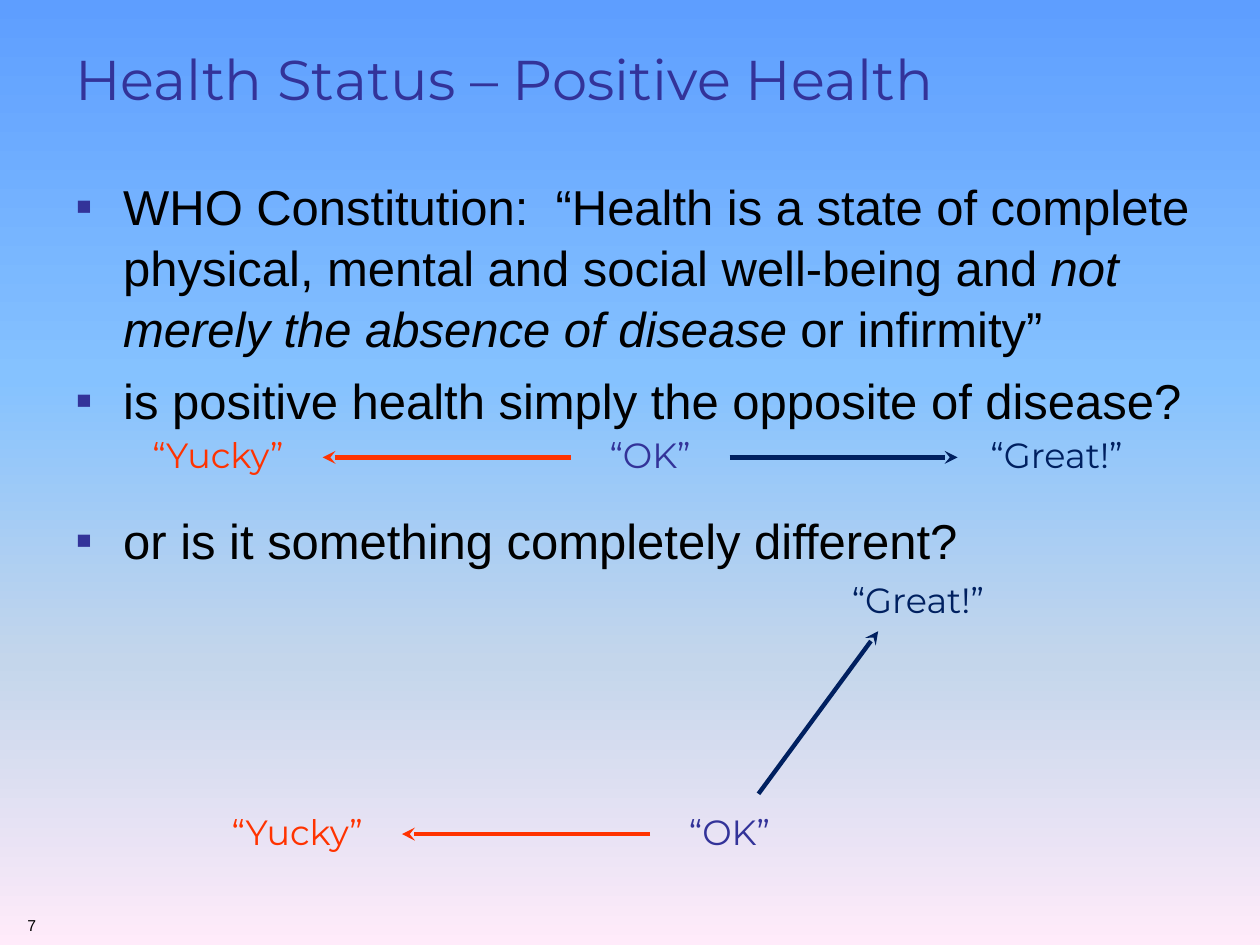
from lxml import etree
from pptx import Presentation
from pptx.dml.color import RGBColor
from pptx.enum import shapes, text
from pptx.oxml.ns import qn
from pptx.util import Inches, Pt

COLORS = {"indigo": "333399", "red": "FF3300", "navy": "002060", "black": "000000"}
SKY = [(0, "5E9EFF"), (40, "85C2FF"), (70, "C4D6EB"), (100, "FFEBFA")]

TITLE = "Health Status – Positive Health"
# Each bullet: space before in points, then (wording, italic) spans
BULLETS = [
    (0, [("WHO Constitution:  “Health is a state of complete physical, "
          "mental and social well-being and ", False),
         ("not merely the absence of disease", True),
         (" or infirmity”", False)]),
    (6.3, [("is positive health simply the opposite of disease?", False)]),
    (45, [("or is it something completely different?", False)]),
]

# Each scale: position of its "OK" label, then the "Great!" label and arrow
SCALES = [
    {"ok": (4.53, 3.39), "great": (7.6, 3.39), "arrow": ((5.79, 3.63), (7.6, 3.63))},
    {"ok": (5.16, 6.38), "great": (6.5, 4.54), "arrow": ((6.02, 6.3), (6.97, 5.01))},
]
YUCKY_OFFSET = 3.55
ARROW_LENGTH = 1.97
ARROW_DROP = 0.24


def rgb(name):
    return RGBColor.from_string(COLORS[name])


def style(font, size, face, color):
    font.size, font.name = Pt(size), face
    font.color.rgb = rgb(color)


def add_box(page, left, top, width, height):
    box = page.shapes.add_textbox(*map(Inches, (left, top, width, height)))
    box.text_frame.word_wrap = True
    return box.text_frame


def add_text(page, place, words, size, face, color, align=text.PP_ALIGN.LEFT):
    frame = add_box(page, *place)
    frame.text = words
    para = frame.paragraphs[0]
    para.alignment = align
    style(para.runs[0].font, size, face, color)


def add_label(page, position, width, words, color):
    add_text(page, (*position, width, 0.44), words, 20, "Montserrat", color,
             text.PP_ALIGN.CENTER)


def add_arrow(page, start, end, color):
    arrow = page.shapes.add_connector(
        shapes.MSO_CONNECTOR.STRAIGHT, *map(Inches, (*start, *end)))
    arrow.line.color.rgb = rgb(color)
    arrow.line.width = Pt(2.5)
    etree.SubElement(arrow.line._get_or_add_ln(), qn("a:tailEnd"), type="stealth")
    etree.SubElement(arrow._element.spPr, qn("a:effectLst"))


def add_bullet(para):
    props = para._p.get_or_add_pPr()
    props.set("marL", str(Inches(0.38)))
    props.set("indent", str(-Inches(0.38)))
    color = etree.SubElement(props, qn("a:buClr"))
    etree.SubElement(color, qn("a:srgbClr"), val=COLORS["indigo"])
    etree.SubElement(props, qn("a:buFont"), typeface="Arial")
    etree.SubElement(props, qn("a:buChar"), char="▪")


def paint_background(page):
    fill = page.background.fill
    fill.gradient()
    fill.gradient_angle = 270
    stops = page._element.find(".//" + qn("a:gsLst"))
    for stop in list(stops):
        stops.remove(stop)
    for percent, color in SKY:
        stop = etree.SubElement(stops, qn("a:gs"), pos=str(percent * 1000))
        etree.SubElement(stop, qn("a:srgbClr"), val=color)


def add_bullets(page):
    frame = add_box(page, 0.5, 1.33, 9.5, 3.54)
    for index, (gap, spans) in enumerate(BULLETS):
        para = frame.paragraphs[0] if index == 0 else frame.add_paragraph()
        add_bullet(para)
        para.line_spacing = 1.04
        para.space_before = Pt(gap)
        for words, italic in spans:
            span = para.add_run()
            span.text = words
            style(span.font, 28, "Arial", "black")
            span.font.italic = italic


def add_scale(page, scale):
    left, top = scale["ok"]
    arrow_top = top + ARROW_DROP
    add_arrow(page, (left, arrow_top), (left - ARROW_LENGTH, arrow_top), "red")
    add_arrow(page, *scale["arrow"], "navy")
    add_label(page, (left, top), 1.26, "“OK”", "indigo")
    add_label(page, (left - YUCKY_OFFSET, top), 1.5, "“Yucky”", "red")
    add_label(page, scale["great"], 1.57, "“Great!”", "navy")


def main():
    deck = Presentation()
    deck.slide_width, deck.slide_height = Inches(10), Inches(7.5)
    page = deck.slides.add_slide(deck.slide_layouts[6])
    paint_background(page)

    # Title, bullets and page number
    add_text(page, (0.5, 0.3, 9, 1.25), TITLE, 32, "Montserrat", "indigo")
    add_bullets(page)
    add_text(page, (0.12, 7.22, 1.66, 0.24), "7", 9, "Arial", "black")

    # Health scales: one straight, one bent
    for scale in SCALES:
        add_scale(page, scale)
    deck.save("out.pptx")


if __name__ == "__main__":
    main()
